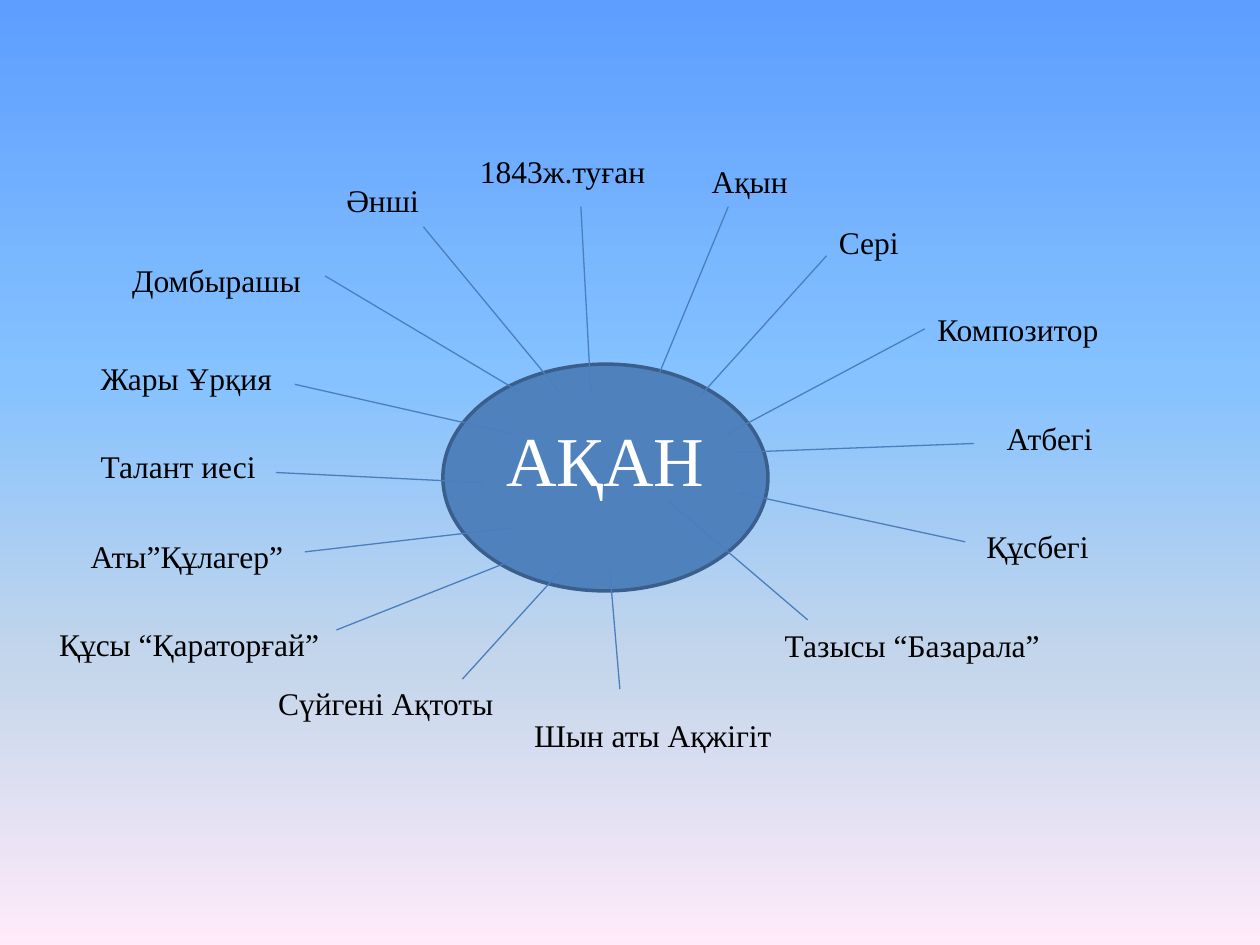
"""Build a mind map of facts around the name АҚАН."""
from lxml import etree
from pptx import Presentation
from pptx import util as u
from pptx.dml.color import RGBColor
from pptx.enum import shapes, text
from pptx.oxml import ns

FONT = "Times New Roman"
COLUMNS, ROWS = 100, 75
CELL = u.Inches(10) // COLUMNS
BLACK = RGBColor(0x00, 0x00, 0x00)
WHITE = RGBColor(0xFF, 0xFF, 0xFF)
HUB_FILL = RGBColor(0x4F, 0x81, 0xBD)
HUB_EDGE = RGBColor(0x3A, 0x5F, 0x8C)
RAY = RGBColor(0x4B, 0x7E, 0xBC)
SKY = [
    (0, RGBColor(0x5E, 0x9E, 0xFF)),
    (40, RGBColor(0x85, 0xC2, 0xFF)),
    (70, RGBColor(0xC4, 0xD6, 0xEB)),
    (100, RGBColor(0xFF, 0xEB, 0xFA)),
]
FACTS = [
    ("1843ж.туған", (37.1, 11.6, 15.5), (46.9, 31.2), (46.1, 16.4)),
    ("Ақын", (55.5, 12.4, 10.2), (52.3, 29.7), (57.8, 16.4)),
    ("Сері", (65.6, 17.2, 8.6), (55.5, 31.5), (65.6, 20.3)),
    ("Композитор", (73.4, 24.1, 19.5), (57.8, 34.4), (73.4, 26.1)),
    ("Атбегі", (78.9, 32.8, 9.4), (58.6, 35.9), (77.3, 35.2)),
    ("Құсбегі", (77.3, 41.3, 12.5), (58.6, 39.1), (76.6, 43)),
    ("Тазысы “Базарала”", (61.3, 49.2, 23), (53.1, 39.8), (64.1, 49.2)),
    ("Шын аты Ақжігіт", (41.4, 56.3, 21.9), (48.4, 45.3), (49.2, 54.7)),
    ("Сүйгені Ақтоты", (21.1, 53.8, 20.3), (44.5, 45.3), (36.7, 53.9)),
    ("Құсы “Қараторғай”", (3.7, 49.1, 23.2), (40.6, 44.5), (26.7, 50)),
    ("Аты”Құлагер”", (6.2, 42.1, 18.8), (40.6, 41.9), (24.2, 43.8)),
    ("Талант иесі", (7, 35, 15.6), (38.3, 38.3), (21.9, 37.5)),
    ("Жары Ұрқия", (7, 28, 16), (40.6, 34.4), (23.4, 30.5)),
    ("Домбырашы", (9.5, 20.2, 16), (41.4, 31.2), (25.8, 21.9)),
    ("Әнші", (26.5, 13.9, 8), (44.5, 31.2), (33.6, 18)),
]


def grid(*cells):
    """Turn grid counts into slide lengths."""
    return [u.Emu(round(cell * CELL)) for cell in cells]


def add_element(parent, tag, **attributes):
    """Append a drawing element with its attributes."""
    return etree.SubElement(parent, ns.qn(tag), attributes)


def paint_background(slide):
    """Fill the slide with the sky gradient from top to bottom."""
    fill = slide.background.fill
    fill.gradient()
    fill.gradient_angle = 270
    stops = slide.element.find(".//" + ns.qn("a:gsLst"))
    stops.clear()
    for percent, color in SKY:
        stop = add_element(stops, "a:gs", pos=str(percent * 1000))
        add_element(stop, "a:srgbClr", val=str(color))


def write(shape, wording, size, color, align):
    """Put one styled paragraph in a shape."""
    frame = shape.text_frame
    frame.word_wrap = True
    paragraph = frame.paragraphs[0]
    paragraph.text = wording
    paragraph.alignment = align
    paragraph.font.name = FONT
    paragraph.font.size = u.Pt(size)
    paragraph.font.color.rgb = color
    return frame


def add_hub(slide, wording):
    """Draw the central ellipse."""
    hub = slide.shapes.add_shape(
        shapes.MSO_SHAPE.OVAL, *grid(35.15, 28.9, 25.8, 18))
    hub.shadow.inherit = False
    hub.fill.solid()
    hub.fill.fore_color.rgb = HUB_FILL
    hub.line.color.rgb = HUB_EDGE
    hub.line.width = u.Pt(2)
    frame = write(hub, wording, 40, WHITE, text.PP_ALIGN.CENTER)
    frame.vertical_anchor = text.MSO_ANCHOR.MIDDLE
    frame.margin_bottom = u.Inches(0.35)


def add_ray(slide, start, end):
    """Draw a thin line from the hub towards a label."""
    ray = slide.shapes.add_connector(
        shapes.MSO_CONNECTOR.STRAIGHT, *grid(*start, *end))
    ray.line.color.rgb = RAY
    ray.line.width = u.Pt(0.75)
    add_element(ray.element.spPr, "a:effectLst")


def add_label(slide, wording, column, row, width):
    """Write one fact beside its ray."""
    label = slide.shapes.add_textbox(*grid(column, row, width, 4))
    frame = write(label, wording, 18, BLACK, text.PP_ALIGN.LEFT)
    frame.auto_size = text.MSO_AUTO_SIZE.SHAPE_TO_FIT_TEXT


def main():
    """Assemble and save the slide."""
    presentation = Presentation()
    presentation.slide_width, presentation.slide_height = grid(COLUMNS, ROWS)
    slide = presentation.slides.add_slide(presentation.slide_layouts[6])
    paint_background(slide)
    add_hub(slide, "АҚАН")
    for wording, place, start, end in FACTS:
        add_ray(slide, start, end)
        add_label(slide, wording, *place)
    presentation.save("out.pptx")


if __name__ == "__main__":
    main()
